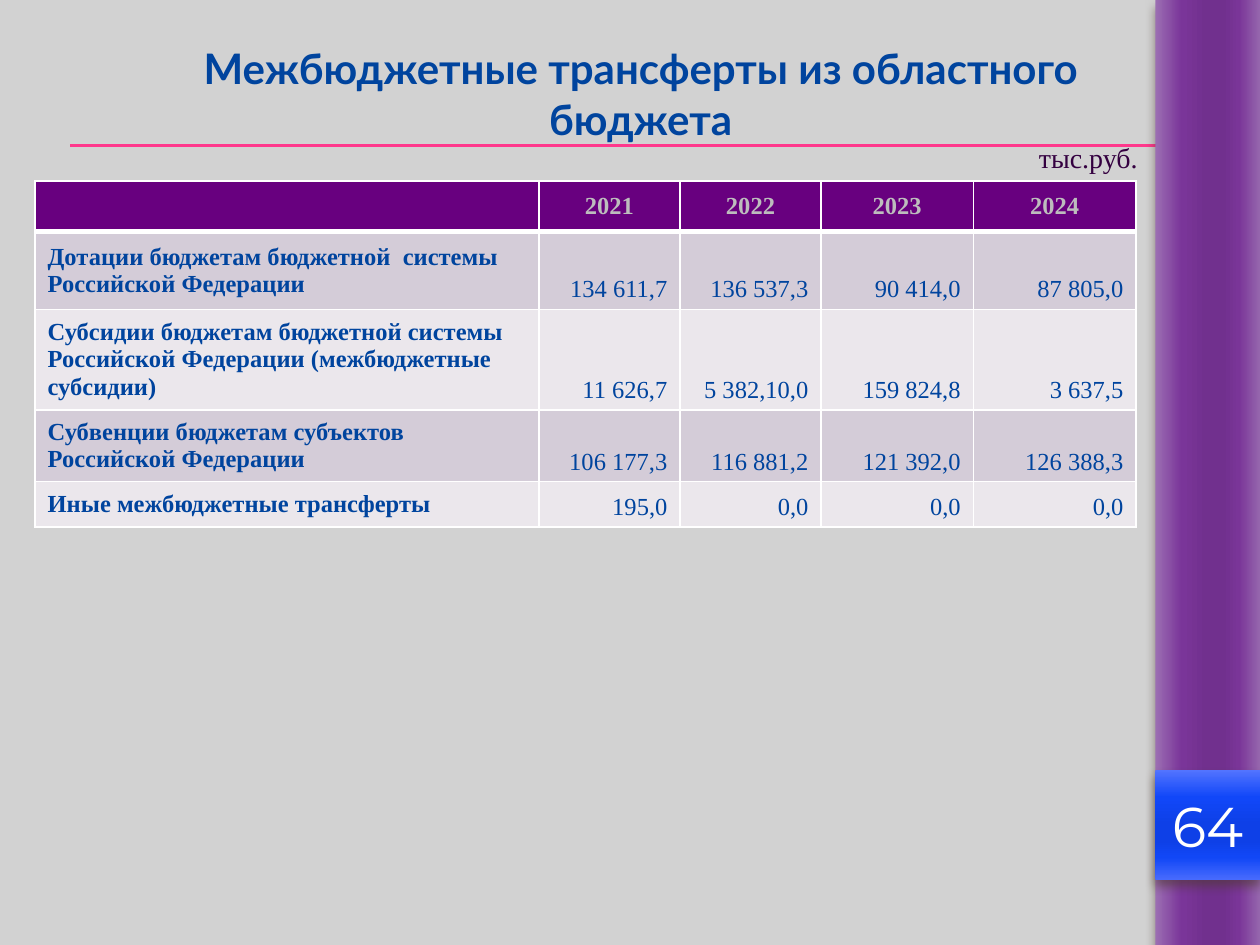
from dataclasses import dataclass

from lxml import etree
from pptx import Presentation
from pptx import util as u
from pptx.dml.color import RGBColor
from pptx.enum import shapes, text
from pptx.oxml.ns import qn

BACKGROUND = RGBColor(0xD2, 0xD2, 0xD2)
PINK = RGBColor(0xFF, 0x38, 0x8C)
BLUE = RGBColor(0x00, 0x44, 0x9E)
PLUM = RGBColor(0x34, 0x00, 0x40)
PURPLE = RGBColor(0x68, 0x00, 0x7F)
SILVER = RGBColor(0xBD, 0xBD, 0xBD)
WHITE = RGBColor(0xFF, 0xFF, 0xFF)
SHADOW = RGBColor(0x4E, 0x3B, 0x30)
BANDS = (RGBColor(0xD4, 0xCC, 0xD8), RGBColor(0xEB, 0xE7, 0xEC))
STOPS = (0, 25, 50, 65, 80, 100)
SERIF = "Times New Roman"
LEFT, CENTER, RIGHT = text.PP_ALIGN.LEFT, text.PP_ALIGN.CENTER, text.PP_ALIGN.RIGHT
TOP, MIDDLE, BOTTOM = text.MSO_ANCHOR.TOP, text.MSO_ANCHOR.MIDDLE, text.MSO_ANCHOR.BOTTOM


@dataclass
class Panel:
    left: float
    top: float
    width: float
    height: float
    colors: tuple
    angle: int


@dataclass
class Row:
    height: float
    label: str
    values: tuple


SIDEBAR = Panel(660.2, 0, 59.8, 540,
                ("9C6FB3", "7A3599", "71308E", "71308E", "7A3598", "9566AD"), 0)
NUMBER_PANEL = Panel(660.2, 440, 59.8, 62.6,
                     ("5374FF", "1147F8", "0E40E7", "0E40E7", "1147F6", "476AFD"), 90)
COLUMN_WIDTHS = (288, 80.6, 80.6, 87, 93)
ROWS = (
    Row(25.7, "", ("2021", "2022", "2023", "2024")),
    Row(44.4, "Дотации бюджетам бюджетной  системы Российской Федерации",
        ("134 611,7", "136 537,3", "90 414,0", "87 805,0")),
    Row(57.4, "Субсидии бюджетам бюджетной системы Российской Федерации (межбюджетные субсидии)",
        ("11 626,7", "5 382,10,0", "159 824,8", "3 637,5")),
    Row(40.7, "Субвенции бюджетам субъектов Российской Федерации",
        ("106 177,3", "116 881,2", "121 392,0", "126 388,3")),
    Row(25.9, "Иные межбюджетные трансферты", ("195,0", "0,0", "0,0", "0,0")),
)


def write(frame, words: str, *, size: float, font: str, color: RGBColor,
          bold: bool = False, align=LEFT, anchor=TOP) -> None:
    frame.vertical_anchor = anchor
    para = frame.paragraphs[0]
    para.alignment = align
    span = para.add_run()
    span.text = words
    span.font.size = u.Pt(size)
    span.font.name = font
    span.font.bold = bold
    span.font.color.rgb = color


def add_color(parent, value: str):
    return etree.SubElement(parent, qn("a:srgbClr"), val=value)


def add_panel(page, panel: Panel):
    box = page.shapes.add_shape(
        shapes.MSO_SHAPE.RECTANGLE, u.Pt(panel.left), u.Pt(panel.top),
        u.Pt(panel.width), u.Pt(panel.height))
    box.line.fill.background()
    box.fill.gradient()
    gradient = box.element.spPr.find(qn("a:gradFill"))
    for child in list(gradient):
        gradient.remove(child)
    stops = etree.SubElement(gradient, qn("a:gsLst"))
    for position, color in zip(STOPS, panel.colors):
        add_color(etree.SubElement(stops, qn("a:gs"), pos=str(position * 1000)), color)
    etree.SubElement(gradient, qn("a:lin"), ang=str(panel.angle * 60000), scaled="0")
    box.shadow.inherit = False
    effects = box.element.spPr.find(qn("a:effectLst"))
    shadow = etree.SubElement(
        effects, qn("a:outerShdw"), blurRad=str(u.Pt(6)), dist=str(u.Pt(4)),
        dir=str(90 * 60000), rotWithShape="0")
    etree.SubElement(add_color(shadow, str(SHADOW)), qn("a:alpha"), val="60000")
    return box


def add_rule(page, top: float) -> None:
    rule = page.shapes.add_connector(
        shapes.MSO_CONNECTOR.STRAIGHT, u.Pt(40.3), u.Pt(top), u.Pt(720), u.Pt(top))
    rule.line.color.rgb = PINK
    rule.line.width = u.Pt(0.75)
    etree.SubElement(rule.element.spPr, qn("a:effectLst"))


def add_borders(cell, bottom: float, top: float) -> None:
    properties = cell._tc.get_or_add_tcPr()
    for side, width in (("L", 1), ("R", 1), ("T", top), ("B", bottom)):
        border = etree.SubElement(properties, qn(f"a:ln{side}"), w=str(u.Pt(width)))
        add_color(etree.SubElement(border, qn("a:solidFill")), str(WHITE))


def add_transfers(page) -> None:
    table = page.shapes.add_table(
        len(ROWS), len(COLUMN_WIDTHS), u.Pt(20), u.Pt(103.5),
        u.Pt(sum(COLUMN_WIDTHS)), u.Pt(sum(row.height for row in ROWS))).table
    for column, width in zip(table.columns, COLUMN_WIDTHS):
        column.width = u.Pt(width)
    for r, row in enumerate(ROWS):
        table.rows[r].height = u.Pt(row.height)
        header = r == 0
        for c, words in enumerate((row.label, *row.values)):
            cell = table.cell(r, c)
            add_borders(cell, bottom=3 if header else 1, top=3 if r == 1 else 1)
            cell.fill.solid()
            cell.fill.fore_color.rgb = PURPLE if header else BANDS[(r - 1) % 2]
            label = c == 0
            cell.vertical_anchor = MIDDLE if header or label else BOTTOM
            if words:
                write(cell.text_frame, words, size=14, font=SERIF,
                      color=SILVER if header else BLUE, bold=header or label,
                      align=CENTER if header else LEFT if label else RIGHT,
                      anchor=None)


def main() -> None:
    deck = Presentation()
    deck.slide_width, deck.slide_height = u.Pt(720), u.Pt(540)
    page = deck.slides.add_slide(deck.slide_layouts[5])
    page.background.fill.solid()
    page.background.fill.fore_color.rgb = BACKGROUND

    for top in (82.8, 83.5):
        add_rule(page, top)
    add_panel(page, SIDEBAR)
    number = add_panel(page, NUMBER_PANEL)
    number.text_frame.margin_left = number.text_frame.margin_right = 0
    write(number.text_frame, "64", size=32, font="Montserrat", color=WHITE,
          align=CENTER, anchor=MIDDLE)

    title = page.shapes.title
    title.left, title.top = u.Pt(65.5), u.Pt(20.9)
    title.width, title.height = u.Pt(601.2), u.Pt(65.5)
    title.text_frame.word_wrap = True
    title.text_frame.auto_size = text.MSO_AUTO_SIZE.SHAPE_TO_FIT_TEXT
    write(title.text_frame, "Межбюджетные трансферты из областного бюджета",
          size=24, font="Lato", color=BLUE, bold=True, align=CENTER)

    add_transfers(page)

    unit = page.shapes.add_textbox(u.Pt(586.6), u.Pt(77), u.Pt(72), u.Pt(26.6))
    unit.text_frame.word_wrap = False
    unit.text_frame.auto_size = text.MSO_AUTO_SIZE.SHAPE_TO_FIT_TEXT
    write(unit.text_frame, "тыс.руб.", size=16, font=SERIF, color=PLUM)

    deck.save("out.pptx")


if __name__ == "__main__":
    main()
